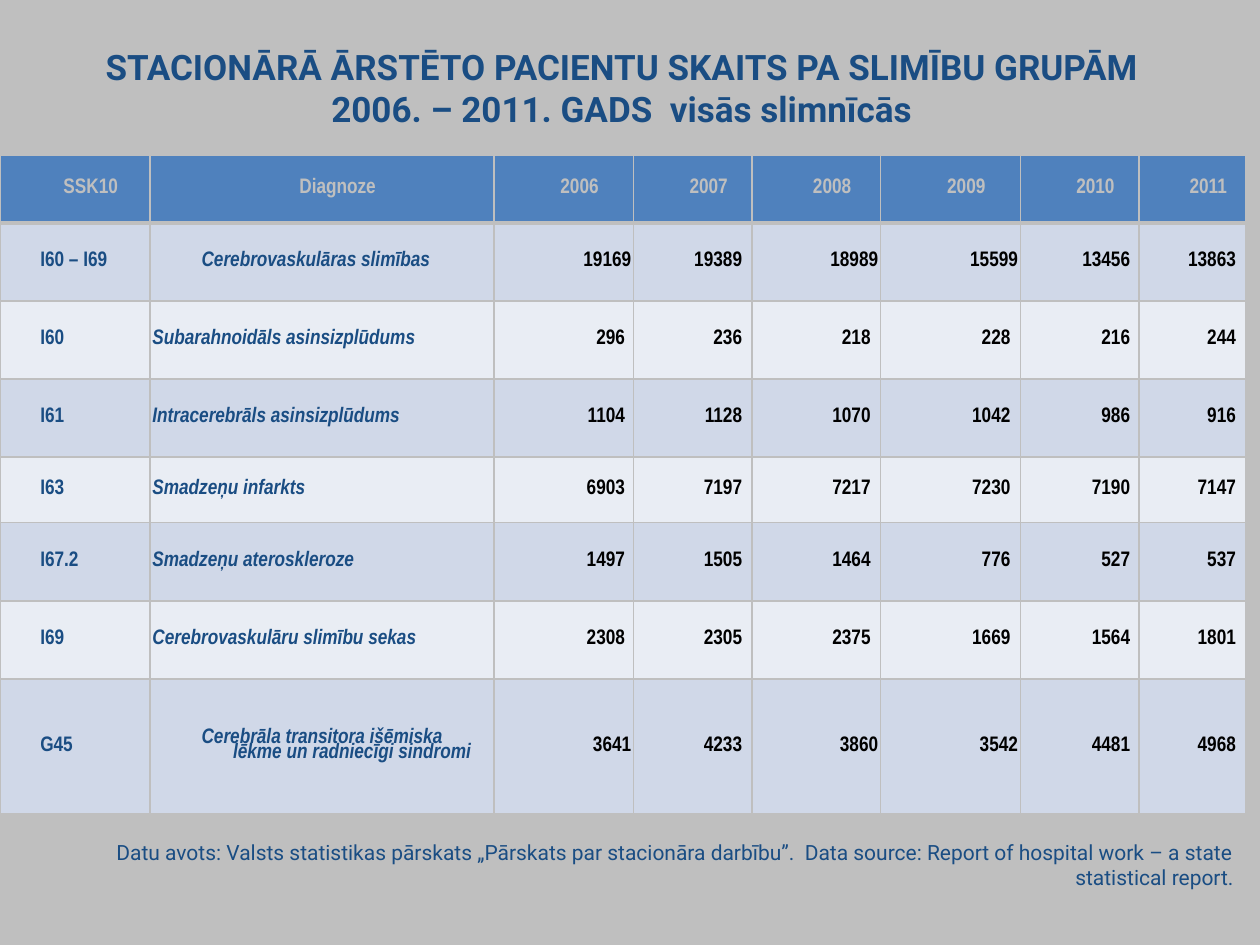
"""Build a slide with a table of hospital patients by disease group, 2006 to 2011."""
from lxml.etree import SubElement
from pptx import Presentation
from pptx.dml.color import RGBColor
from pptx.enum.text import MSO_ANCHOR, PP_ALIGN
from pptx.oxml.ns import qn
from pptx.util import Pt

PX = 9144  # EMU
COLORS = {
    "gray": "BFBFBF", "navy": "1A4D83", "blue": "4F81BD",
    "dark band": "D0D8E8", "light band": "E9EDF4", "black": "000000",
}
HEADER = ["SSK10", "Diagnoze", "2006", "2007", "2008", "2009", "2010", "2011"]
ROWS = [
    ["I60 – I69", "Cerebrovaskulāras slimības", 19169, 19389, 18989, 15599, 13456, 13863],
    ["I60", "Subarahnoidāls asinsizplūdums", 296, 236, 218, 228, 216, 244],
    ["I61", "Intracerebrāls asinsizplūdums", 1104, 1128, 1070, 1042, 986, 916],
    ["I63", "Smadzeņu infarkts", 6903, 7197, 7217, 7230, 7190, 7147],
    ["I67.2", "Smadzeņu ateroskleroze", 1497, 1505, 1464, 776, 527, 537],
    ["I69", "Cerebrovaskulāru slimību sekas", 2308, 2305, 2375, 1669, 1564, 1801],
    ["G45", "Cerebrāla transitora išēmiska lēkme un radniecīgi sindromi",
     3641, 4233, 3860, 3542, 4481, 4968],
]
COLUMN_WIDTHS = [119, 273, 111, 94, 102, 111, 94, 85]
ROW_HEIGHTS = [54, 62, 62, 62, 52, 62, 62, 107]
GROUP_ROWS = (1, 7)
HEADER_INSETS = [(7, 7)] * 8
GROUP_INSETS = [(7, 7), (16, 2), (16, 2), (2, 8), (16, 2), (16, 2), (7, 7), (2, 8)]
DETAIL_INSETS = [(7, 7), (2, 2), (7, 7), (2, 8), (2, 8), (2, 8), (7, 7), (2, 8)]


def add_span(para, text, font, size, color, bold=False, italic=False):
    span = para.add_run()
    span.text = text
    span.font.name = font
    span.font.size = Pt(size)
    span.font.bold = bold
    span.font.italic = italic
    span.font.color.rgb = RGBColor.from_string(COLORS[color])


def add_border(cell, side, width):
    line = SubElement(cell._tc.get_or_add_tcPr(), qn("a:" + side), w=str(Pt(width)))
    fill = SubElement(line, qn("a:solidFill"))
    SubElement(fill, qn("a:srgbClr"), val=COLORS["gray"])


deck = Presentation()
deck.slide_width = 1000 * PX
deck.slide_height = 750 * PX
page = deck.slides.add_slide(deck.slide_layouts[6])
page.background.fill.solid()
page.background.fill.fore_color.rgb = RGBColor.from_string(COLORS["gray"])

title = page.shapes.add_textbox(47 * PX, 31 * PX, 900 * PX, 125 * PX)
title.text_frame.word_wrap = True
para = title.text_frame.paragraphs[0]
para.alignment = PP_ALIGN.CENTER
add_span(para, "STACIONĀRĀ ĀRSTĒTO PACIENTU SKAITS PA SLIMĪBU GRUPĀM ", "Roboto", 20, "navy", bold=True)
para.add_line_break()
add_span(para, "2006. – 2011. GADS  visās slimnīcās ", "Roboto", 20, "navy", bold=True)

table = page.shapes.add_table(
    len(ROW_HEIGHTS), len(COLUMN_WIDTHS), 0, 123 * PX,
    sum(COLUMN_WIDTHS) * PX, sum(ROW_HEIGHTS) * PX).table
for column, width in zip(table.columns, COLUMN_WIDTHS):
    column.width = width * PX
for row, height in zip(table.rows, ROW_HEIGHTS):
    row.height = height * PX

for r, values in enumerate([HEADER] + ROWS):
    if r == 0:
        band, insets = "blue", HEADER_INSETS
    else:
        band = "dark band" if r % 2 else "light band"
        insets = GROUP_INSETS if r in GROUP_ROWS else DETAIL_INSETS
    for c, value in enumerate(values):
        cell = table.cell(r, c)
        cell.vertical_anchor = MSO_ANCHOR.MIDDLE
        cell.margin_left, cell.margin_right = (inset * PX for inset in insets[c])
        cell.margin_top = cell.margin_bottom = 0
        for side in ("lnL", "lnR", "lnT", "lnB"):
            add_border(cell, side, 3 if r == 0 and side == "lnB" else 1)
        cell.fill.solid()
        cell.fill.fore_color.rgb = RGBColor.from_string(COLORS[band])

        para = cell.text_frame.paragraphs[0]
        para.line_spacing = 0.8
        indent = 21 if c == 1 and r > 0 and r not in GROUP_ROWS else 50
        properties = para._p.get_or_add_pPr()
        properties.set("marL", str(indent * PX))
        properties.set("indent", str(-25 * PX))
        if r == 0:
            para.alignment, color = PP_ALIGN.CENTER, "gray"
        elif c < 2:
            para.alignment, color = PP_ALIGN.LEFT, "navy"
        else:
            para.alignment, color = PP_ALIGN.RIGHT, "black"
        add_span(para, str(value), "Arial Narrow", 12, color, bold=True, italic=r > 0 and c == 1)

source = page.shapes.add_textbox(20 * PX, 661 * PX, 969 * PX, 50 * PX)
source.text_frame.word_wrap = True
source.text_frame.vertical_anchor = MSO_ANCHOR.MIDDLE
para = source.text_frame.paragraphs[0]
para.alignment = PP_ALIGN.RIGHT
add_span(para, "Datu avots: Valsts statistikas pārskats „Pārskats par stacionāra darbību”.  "
         "Data source: Report of hospital work – a state statistical report.", "Roboto", 12, "navy")

deck.save("out.pptx")
